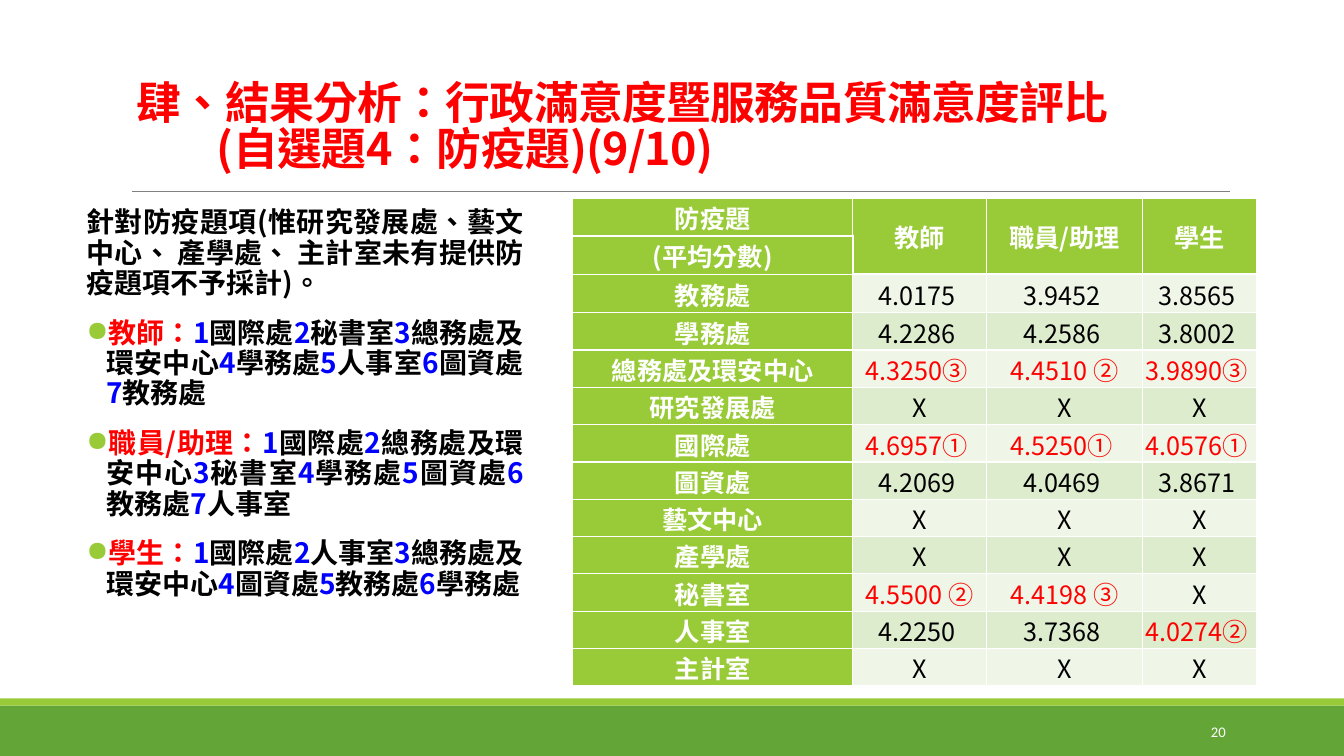
from dataclasses import dataclass

from lxml import etree
from pptx import Presentation
from pptx import util as u
from pptx.dml.color import RGBColor
from pptx.enum import shapes, text
from pptx.oxml.ns import qn


@dataclass(frozen=True)
class Theme:
    cjk: str = "Noto Sans CJK SC"
    latin: str = "Calibri"
    dark_green: str = "63A537"
    green: str = "99CB38"
    pale_rows: tuple = ("EFF6E8", "DEECCE")
    rule: str = "808080"
    white: str = "FFFFFF"
    black: str = "000000"
    red: str = "FF0000"
    blue: str = "0000FF"
    title_size: float = 32
    body_size: float = 20
    table_size: float = 18
    page_size: float = 10.5


theme = Theme()


def style_run(run, size, color, bold=False, font=theme.cjk):
    run.font.size = u.Pt(size)
    run.font.bold = bold
    run.font.color.rgb = RGBColor.from_string(color)
    run.font.name = font
    properties = run._r.get_or_add_rPr()
    properties.set("lang", "zh-TW")
    etree.SubElement(properties, qn("a:ea"), typeface=font)


def add_text_frame(left, top, width, height, anchor, side_margin=0.25):
    """Add a wrapping text box, measured in centimetres, and return its frame."""
    box = slide.shapes.add_textbox(u.Cm(left), u.Cm(top), u.Cm(width), u.Cm(height))
    frame = box.text_frame
    frame.word_wrap = True
    frame.vertical_anchor = anchor
    frame.margin_left = frame.margin_right = u.Cm(side_margin)
    frame.margin_top = frame.margin_bottom = u.Cm(0.13)
    return frame


prs = Presentation()
prs.slide_width, prs.slide_height = u.Cm(33.87), u.Cm(19.05)
slide = prs.slides.add_slide(prs.slide_layouts[6])

# Footer bands and title rule
for top, height, color in ((17.78, 1.27, theme.dark_green), (17.6, 0.18, theme.green)):
    band = slide.shapes.add_shape(
        shapes.MSO_SHAPE.RECTANGLE, 0, u.Cm(top), prs.slide_width, u.Cm(height))
    band.shadow.inherit = False
    band.fill.solid()
    band.fill.fore_color.rgb = RGBColor.from_string(color)
    band.line.fill.background()

title_rule = slide.shapes.add_connector(
    shapes.MSO_CONNECTOR.STRAIGHT, u.Cm(3.33), u.Cm(4.82), u.Cm(31), u.Cm(4.82))
title_rule.line.color.rgb = RGBColor.from_string(theme.rule)
title_rule.line.width = u.Pt(0.5)
etree.SubElement(title_rule._element.spPr, qn("a:effectLst"))

# Rankings by group
rankings = [
    ("教師：", "國際處 秘書室 總務處及環安中心 學務處 人事室 圖資處 教務處"),
    ("職員/助理：", "國際處 總務處及環安中心 秘書室 學務處 圖資處 教務處 人事室"),
    ("學生：", "國際處 人事室 總務處及環安中心 圖資處 教務處 學務處"),
]
ranking_frame = add_text_frame(2.18, 5.13, 11.02, 12.24, text.MSO_ANCHOR.TOP, 0)
intro = ranking_frame.paragraphs[0]
intro.text = "針對防疫題項(惟研究發展處、藝文中心、 產學處、 主計室未有提供防疫題項不予採計)。"
style_run(intro.runs[0], theme.body_size, theme.black, True)

for group, offices in rankings:
    ranking = ranking_frame.add_paragraph()
    ranking.space_before = u.Pt(12)
    properties = ranking._p.get_or_add_pPr()
    properties.set("marL", str(u.Cm(0.5)))
    properties.set("indent", str(u.Cm(-0.5)))
    bullet_color = etree.SubElement(properties, qn("a:buClr"))
    etree.SubElement(bullet_color, qn("a:srgbClr"), val=theme.green)
    etree.SubElement(properties, qn("a:buChar"), char="●")
    parts = [(group, theme.red)]
    for rank, office in enumerate(offices.split(), 1):
        parts += [(str(rank), theme.blue), (office, theme.black)]
    for words, color in parts:
        part = ranking.add_run()
        part.text = words
        style_run(part, theme.body_size, color, True)

for paragraph in ranking_frame.paragraphs:
    paragraph.alignment = text.PP_ALIGN.JUSTIFY
    paragraph.line_spacing = 0.9
    paragraph.space_after = u.Pt(2)

# Page number
page_number = add_text_frame(27.51, 17.93, 3.63, 1.02, text.MSO_ANCHOR.MIDDLE).paragraphs[0]
page_number.text = "20"
page_number.alignment = text.PP_ALIGN.RIGHT
style_run(page_number.runs[0], theme.page_size, theme.white, font=theme.latin)

# Title
title = add_text_frame(3.2, 0.84, 28.78, 3.68, text.MSO_ANCHOR.BOTTOM).paragraphs[0]
title.text = "肆、結果分析：行政滿意度暨服務品質滿意度評比\v(自選題4：防疫題)(9/10)"
title.line_spacing = 0.85
title._p.get_or_add_pPr().set("marL", str(u.Cm(2)))
title._p.get_or_add_pPr().set("indent", str(u.Cm(-2)))
for run in title.runs:
    style_run(run, theme.title_size, theme.red, True)
    run._r.get_or_add_rPr().set("spc", "-50")

# Score table
scores = [
    ("防疫題", "教師", "職員/助理", "學生"),
    ("(平均分數)", "", "", ""),
    ("教務處", "4.0175 ", "3.9452 ", "3.8565 "),
    ("學務處", "4.2286 ", "4.2586 ", "3.8002 "),
    ("總務處及環安中心", "4.3250③ ", "4.4510 ②", "3.9890③ "),
    ("研究發展處", "X", "X", "X"),
    ("國際處", "4.6957① ", "4.5250① ", "4.0576① "),
    ("圖資處", "4.2069 ", "4.0469 ", "3.8671 "),
    ("藝文中心", "X", "X", "X"),
    ("產學處", "X", "X", "X"),
    ("秘書室", "4.5500 ②", "4.4198 ③", "X"),
    ("人事室", "4.2250 ", "3.7368 ", "4.0274② "),
    ("主計室", "X", "X", "X"),
]
column_widths = (7.06, 3.38, 3.92, 2.88)
row_heights = [0.94, 0.97, 0.97] + [0.94] * 10
score_table = slide.shapes.add_table(
    len(scores), len(column_widths), u.Cm(14.43), u.Cm(5),
    u.Cm(sum(column_widths)), u.Cm(sum(row_heights))).table
score_table.horz_banding = False
for column, width in zip(score_table.columns, column_widths):
    column.width = u.Cm(width)
for row, height in zip(score_table.rows, row_heights):
    row.height = u.Cm(height)
for column in range(1, len(column_widths)):
    score_table.cell(0, column).merge(score_table.cell(1, column))

for r, row_values in enumerate(scores):
    for c, value in enumerate(row_values):
        cell = score_table.cell(r, c)
        is_heading = r < 2 or c == 0
        cell.vertical_anchor = text.MSO_ANCHOR.MIDDLE
        cell.margin_left = cell.margin_right = cell.margin_top = u.Cm(0.03)
        cell.margin_bottom = 0

        heavy_edges = {0: "B", 1: "TR" if c == 0 else "", 2: "T" if c else ""}.get(r, "")
        for edge in "LRTB":
            border_width = u.Pt(1.5 if edge in heavy_edges else 1)
            border = etree.SubElement(
                cell._tc.get_or_add_tcPr(), qn(f"a:ln{edge}"), w=str(border_width))
            border_fill = etree.SubElement(border, qn("a:solidFill"))
            etree.SubElement(border_fill, qn("a:srgbClr"), val=theme.white)

        cell.fill.solid()
        cell.fill.fore_color.rgb = RGBColor.from_string(
            theme.green if is_heading else theme.pale_rows[r % 2])
        if not value:
            continue
        cell.text_frame.text = value
        score = cell.text_frame.paragraphs[0]
        score.alignment = text.PP_ALIGN.CENTER
        is_top_three = any(mark in value for mark in "①②③")
        color = theme.white if is_heading else theme.red if is_top_three else theme.black
        style_run(score.runs[0], theme.table_size, color, is_heading)

prs.save("out.pptx")
